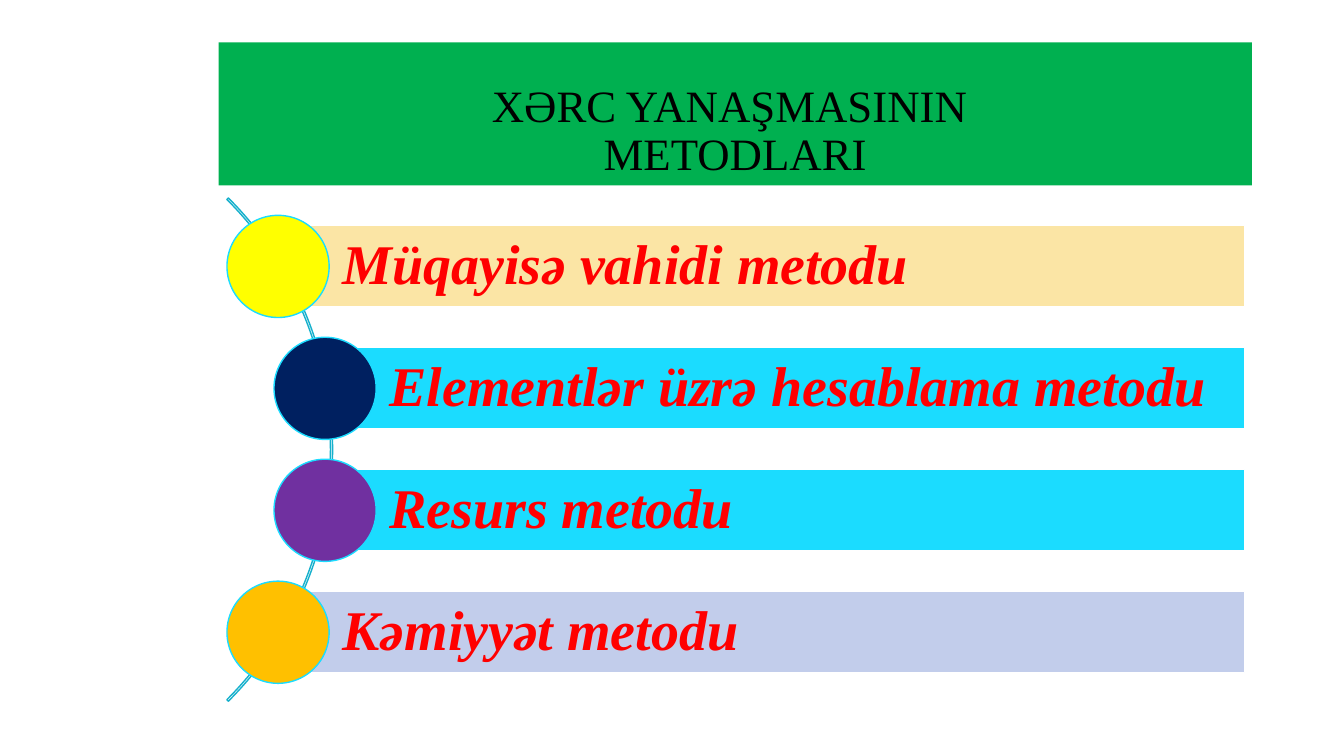
from pptx import Presentation
from pptx.dml.color import RGBColor
from pptx.enum.shapes import MSO_SHAPE as SHAPE
from pptx.enum.text import MSO_ANCHOR as ANCHOR, MSO_AUTO_SIZE as AUTOSIZE, PP_ALIGN as ALIGN
from pptx.util import Pt

FONT = "Times New Roman"
BAR_RIGHT, BAR_H = 889, 58
CIRCLE_D = 73
FIRST_Y, PITCH = 190.3, 87.1  # row centres
OUTER_X, INNER_X = 198.6, 232.2  # circle centres
METHODS = [
    ("Müqayisə vahidi metodu", OUTER_X, "FBE5A5", "FFFF00"),
    ("Elementlər üzrə hesablama metodu", INNER_X, "1BDCFF", "002060"),
    ("Resurs metodu", INNER_X, "1BDCFF", "7030A0"),
    ("Kəmiyyət metodu", OUTER_X, "C2CDEB", "FFC000"),
]


def rgb(color):
    return RGBColor.from_string(color)


def add_shape(s, kind, x, y, w, h, line, fill=None):
    sp = s.shapes.add_shape(kind, Pt(x), Pt(y), Pt(w), Pt(h))
    sp.shadow.inherit = False
    if fill:
        sp.fill.solid()
        sp.fill.fore_color.rgb = rgb(fill)
    else:
        sp.fill.background()
    sp.line.color.rgb = rgb(line)
    sp.line.width = Pt(1)
    return sp


def style(p, size, color, align, bold=False, italic=False):
    p.alignment = align
    p.line_spacing = 0.9
    p.font.name = FONT
    p.font.size = Pt(size)
    p.font.color.rgb = rgb(color)
    p.font.bold = bold
    p.font.italic = italic


def set_title(s, text):
    sp = s.shapes.title
    sp.left, sp.top, sp.width, sp.height = Pt(156.2), Pt(30.2), Pt(738), Pt(102.2)
    sp.fill.solid()
    sp.fill.fore_color.rgb = rgb("00B050")
    tf = sp.text_frame
    tf.auto_size = AUTOSIZE.NONE
    tf.vertical_anchor = ANCHOR.BOTTOM
    tf.text = text
    style(tf.paragraphs[0], 32, "000000", ALIGN.CENTER)


def add_arc(s):
    arc = add_shape(s, SHAPE.BLOCK_ARC, -270.7, 67, 508.3, 508.3, "16B0CC")
    for i, value in enumerate((189, 27, 0.003)):
        arc.adjustments[i] = value


def add_method(s, text, x, y, bar_fill, circle_fill):
    """Add a labelled bar that starts at the centre (x, y) of its circle."""
    bar = add_shape(s, SHAPE.RECTANGLE, x, y - BAR_H / 2, BAR_RIGHT - x, BAR_H,
                    "FFFFFF", bar_fill)
    tf = bar.text_frame
    tf.word_wrap = True
    tf.vertical_anchor = ANCHOR.MIDDLE
    tf.margin_left = Pt(46)
    tf.margin_top = tf.margin_right = tf.margin_bottom = Pt(8)
    tf.text = text
    style(tf.paragraphs[0], 40, "FF0000", ALIGN.LEFT, bold=True, italic=True)
    add_shape(s, SHAPE.OVAL, x - CIRCLE_D / 2, y - CIRCLE_D / 2, CIRCLE_D, CIRCLE_D,
              "1BDCFF", circle_fill)


def main():
    prs = Presentation()
    prs.slide_width, prs.slide_height = Pt(960), Pt(540)
    s = prs.slides.add_slide(prs.slide_layouts.get_by_name("Title Only"))
    set_title(s, "XƏRC YANAŞMASININ \vMETODLARI")
    add_arc(s)
    for i, (text, x, bar_fill, circle_fill) in enumerate(METHODS):
        add_method(s, text, x, FIRST_Y + i * PITCH, bar_fill, circle_fill)
    prs.save("out.pptx")


if __name__ == "__main__":
    main()
